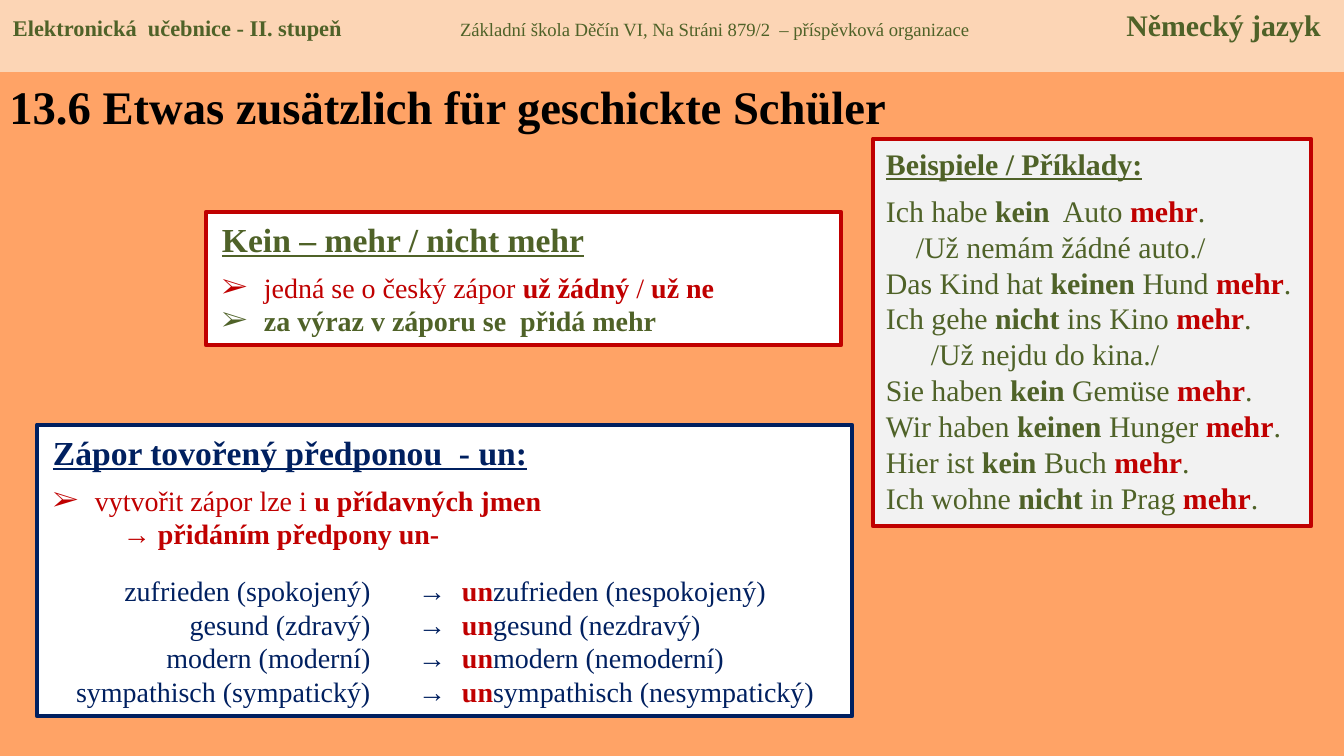
"""Build a German grammar slide on negation with mehr and the prefix un-."""
from lxml.etree import SubElement
from pptx import Presentation
from pptx.dml.color import RGBColor
from pptx.enum.shapes import MSO_SHAPE
from pptx.enum.text import MSO_ANCHOR, MSO_AUTO_SIZE, PP_ALIGN
from pptx.oxml.ns import qn
from pptx.util import Emu, Pt

PX = 914400 / 134.4
FACE = "Times New Roman"
GREEN, RED, NAVY = "4F6228", "C00000", "002060"
LEFT, RIGHT = PP_ALIGN.LEFT, PP_ALIGN.RIGHT
hue = RGBColor.from_string


def box(x, y, w, h, fill=None, edge=None, left=13):
    place = [Emu(round(n * PX)) for n in (x, y, w, h)]
    if fill:
        shape = slide.shapes.add_shape(MSO_SHAPE.RECTANGLE, *place)
        shape.shadow.inherit = False
        shape.fill.solid()
        shape.fill.fore_color.rgb = hue(fill)
        shape.line.fill.background()
    else:
        shape = slide.shapes.add_textbox(*place)
    if edge:
        shape.line.color.rgb = hue(edge)
        shape.line.width = Pt(2.5)
    frame = shape.text_frame
    frame.word_wrap = True
    frame.vertical_anchor = MSO_ANCHOR.TOP
    frame.margin_left = Emu(round(left * PX))
    return frame


def write(frame, runs, after=0, left=0, mark=None, side=LEFT):
    par = frame.paragraphs[0]
    if par.runs:
        par = frame.add_paragraph()
    props = par._p.get_or_add_pPr()
    props.set("marL", str(round(left * PX)))
    props.set("indent", str(round(-left * PX) if mark else 0))
    if mark:
        SubElement(props, qn("a:buFont"), typeface=FACE)
        SubElement(props, qn("a:buChar"), char=mark)
    par.alignment = side
    par.space_before = Pt(0)
    par.space_after = Pt(after)
    for text, size, tone, bold, *line in runs:
        run = par.add_run()
        run.text = text
        font = run.font
        font.name = FACE
        font.size = Pt(size)
        font.color.rgb = hue(tone)
        font.bold = bold
        font.underline = bool(line)


deck = Presentation()
deck.slide_width = Emu(round(1344 * PX))
deck.slide_height = Emu(round(756 * PX))
slide = deck.slides.add_slide(deck.slide_layouts[5])
slide.background.fill.solid()
slide.background.fill.fore_color.rgb = hue("FFA366")

box(0, 0, 1344, 72, "FCD5B5")
for x, y, w, text, size, bold, side in [
        (0, 8, 400, "Elektronická  učebnice - II. stupeň", 12, True, LEFT),
        (447, 11, 560,
         "Základní škola Děčín VI, Na Stráni 879/2  – příspěvková organizace",
         10, False, LEFT),
        (1034, 0, 300, "Německý jazyk", 16, True, RIGHT)]:
    write(box(x, y, w, 48), [(text, size, GREEN, bold)], side=side)

title = slide.shapes.title
title.left, title.top, title.width, title.height = [
    Emu(round(n * PX)) for n in (-4, 71, 914, 70)]
frame = title.text_frame
frame.word_wrap = True
frame.auto_size = MSO_AUTO_SIZE.NONE
frame.vertical_anchor = MSO_ANCHOR.MIDDLE
write(frame, [("13.6 Etwas zusätzlich für geschickte Schüler", 25, "000000", True)])

rule = box(206, 212, 635, 133, "FFFFFF", RED, 16)
write(rule, [("Kein – mehr / nicht mehr", 18, GREEN, True, True)], 6)
write(rule, [("jedná se o český zápor ", 15, RED, False),
             ("už žádný ", 15, RED, True),
             ("/ ", 15, RED, False),
             ("už ne", 15, RED, True)], left=42, mark="➢")
write(rule, [("za výraz v záporu se  přidá mehr", 15, GREEN, True)],
      3, 42, "➢")

cases = box(873, 139, 438, 387, "F2F2F2", RED)
cases.word_wrap = False
write(cases, [("Beispiele / Příklady:", 16, GREEN, True, True)], 6)
for start, neg, rest, czech, left in [
        ("Ich habe ", "kein ", " Auto ", "/Už nemám žádné auto./", 30),
        ("Das Kind hat ", "keinen ", "Hund ", "", 0),
        ("Ich gehe ", "nicht", " ins Kino ", "/Už nejdu do kina./", 45),
        ("Sie haben ", "kein ", "Gemüse ", "", 0),
        ("Wir haben ", "keinen ", "Hunger ", "", 0),
        ("Hier ist ", "kein", " Buch ", "", 0),
        ("Ich wohne ", "nicht", " in Prag ", "", 0)]:
    write(cases, [(start, 16, GREEN, False), (neg, 16, GREEN, True),
                  (rest, 16, GREEN, False), ("mehr", 16, RED, True),
                  (".", 16, GREEN, False)])
    if czech:
        write(cases, [(czech, 16, GREEN, False)], left=left)

pairs = box(37, 425, 815, 291, "FFFFFF", NAVY, 16)
write(pairs, [("Zápor tovořený předponou  - un:", 18, NAVY, True, True)], 6)
write(pairs, [("vytvořit zápor lze i ", 15, RED, False),
              ("u přídavných jmen", 15, RED, True)], left=42, mark="➢")
write(pairs, [("→ přidáním předpony un-", 15, RED, True)], left=70)

words, arrows, antis = [
    box(x, 567, w, 148) for x, w in [(44, 340), (405, 54), (449, 403)]]
for word, czech, anti in [
        ("zufrieden", "spokojený", "nespokojený"),
        ("gesund", "zdravý", "nezdravý"),
        ("modern", "moderní", "nemoderní"),
        ("sympathisch", "sympatický", "nesympatický")]:
    write(words, [(f"{word} ({czech})", 15, NAVY, False)], side=RIGHT)
    write(arrows, [("→", 15, NAVY, False)])
    write(antis, [("un", 15, RED, True),
                  (f"{word} ({anti})", 15, NAVY, False)])

deck.save("out.pptx")
